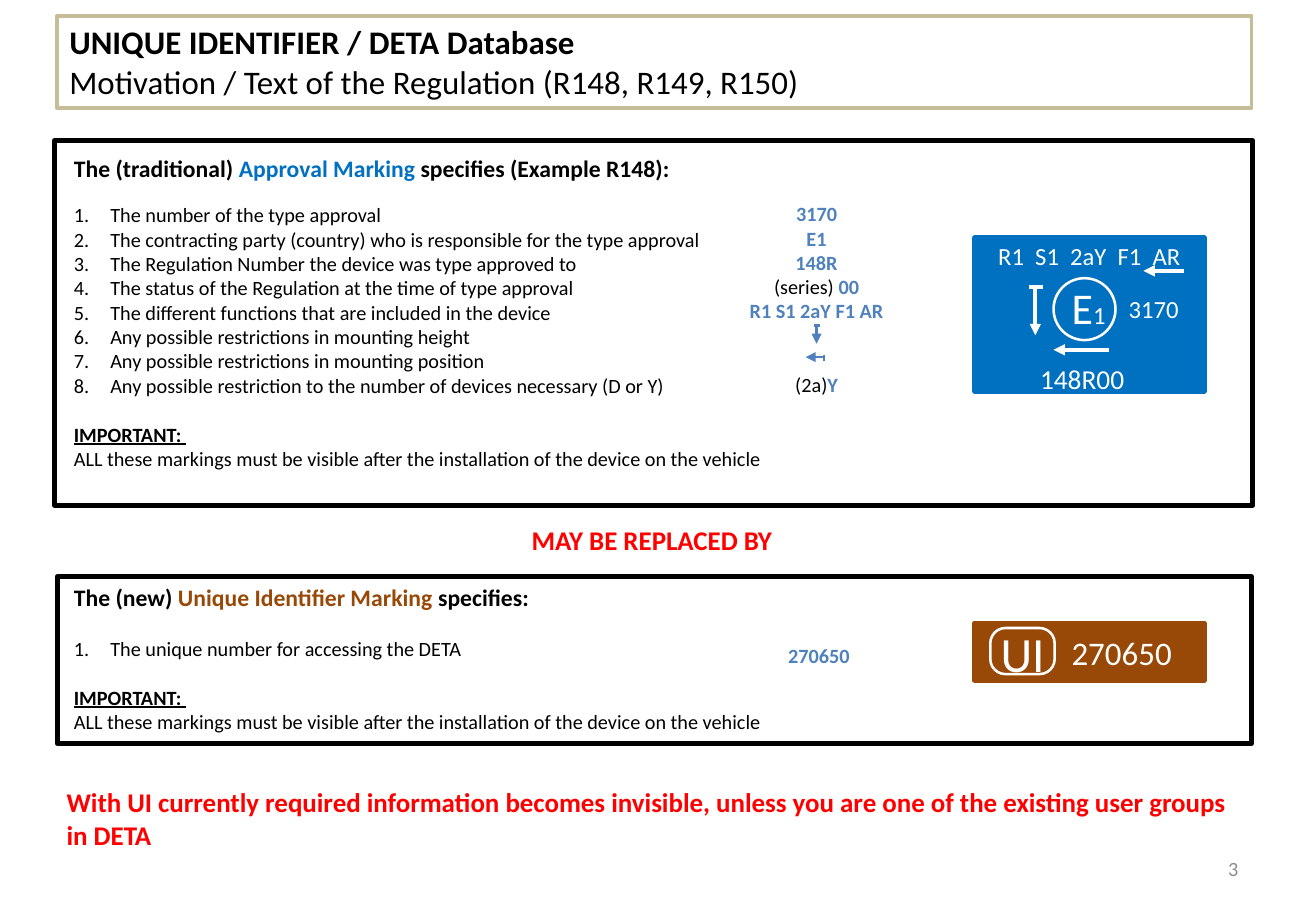
from lxml.etree import SubElement
from pptx import Presentation
from pptx.dml.color import RGBColor
from pptx.enum.shapes import MSO_CONNECTOR, MSO_SHAPE
from pptx.enum.text import MSO_ANCHOR, PP_ALIGN
from pptx.oxml.ns import qn
from pptx.util import Inches, Pt

FONT = "Calibri"
COLORS = {
    "black": "000000", "white": "FFFFFF", "red": "FF0000", "blue": "0070C0",
    "brown": "984807", "steel": "4F81BD", "tan": "C4BD97", "gray": "8C8C8C",
}
ITEMS = [
    "The number of the type approval",
    "The contracting party (country) who is responsible for the type approval",
    "The Regulation Number the device was type approved to",
    "The status of the Regulation at the time of type approval",
    "The different functions that are included in the device",
    "Any possible restrictions in mounting height",
    "Any possible restrictions in mounting position",
    "Any possible restriction to the number of devices necessary (D or Y)",
]
MARKS = ["3170", "E1", "148R", "00", "R1 S1 2aY F1 AR"]
LINE = 14.65  # height in points of one line of 12 point text


def rgb(name):
    return RGBColor.from_string(COLORS[name])


def style(run, size, color, bold=False, under=False):
    font = run.font
    font.name, font.size, font.bold = FONT, Pt(size), bold
    font.underline = under
    font.color.rgb = rgb(color)


def fill_para(para, runs, align=PP_ALIGN.LEFT, before=0):
    """Fill a paragraph with runs given as (text, size, color, bold, underline)."""
    para.alignment = align
    para.space_before = Pt(before)
    for text, *look in runs:
        run = para.add_run()
        run.text = text
        style(run, *look)


def add_para(frame, runs, **options):
    first = frame.paragraphs[0]
    para = frame.add_paragraph() if first.runs else first
    fill_para(para, runs, **options)
    return para


def add_text(shapes, box, *runs, align=PP_ALIGN.LEFT):
    frame = shapes.add_textbox(*map(Inches, box)).text_frame
    frame.word_wrap = True
    if runs:
        add_para(frame, runs, align=align)
    return frame


def add_box(shapes, kind, box, line, width, fill=None):
    shape = shapes.add_shape(kind, *map(Inches, box))
    shape.shadow.inherit = False
    if fill:
        shape.fill.solid()
        shape.fill.fore_color.rgb = rgb(fill)
    else:
        shape.fill.background()
    shape.line.color.rgb = rgb(line)
    shape.line.width = Pt(width)
    return shape


def add_line(shapes, ends, color, width, arrow=False):
    line = shapes.add_connector(MSO_CONNECTOR.STRAIGHT, *map(Inches, ends))
    line.line.color.rgb = rgb(color)
    line.line.width = Pt(width)
    if arrow:
        SubElement(line.line._get_or_add_ln(), qn("a:tailEnd"), type="triangle")
    SubElement(line._element.spPr, qn("a:effectLst"))


def add_rules(shapes, top, head, items, gap):
    """Heading, numbered list and the note on visibility."""
    frame = add_text(shapes, (0.51, top, 7, 1.35), *head)
    for i, item in enumerate(items):
        para = add_para(frame, [(item, 12, "black")], before=0 if i else gap)
        props = para._p.get_or_add_pPr()
        props.set("marL", str(Inches(0.3)))
        props.set("indent", str(-Inches(0.3)))
        SubElement(props, qn("a:buFont"), typeface="+mj-lt")
        SubElement(props, qn("a:buAutoNum"), type="arabicPeriod")
    add_para(frame, [("IMPORTANT: ", 12, "black", True, True)], before=LINE)
    add_para(frame, [("ALL these markings must be visible after the "
                      "installation of the device on the vehicle", 12, "black")])


def add_title(slide):
    title = slide.shapes.title
    title.left, title.top, title.width, title.height = map(
        Inches, (0.47, 0.13, 9.83, 0.76))
    title.line.color.rgb = rgb("tan")
    title.line.width = Pt(2.25)
    frame = title.text_frame
    frame.vertical_anchor = MSO_ANCHOR.TOP
    add_para(frame, [("UNIQUE IDENTIFIER / DETA Database", 19.5, "black", True)])
    add_para(frame, [("Motivation / Text of the Regulation (R148, R149, R150)",
                      19.5, "black")])


def add_marks(shapes):
    """Middle column: the value that answers each list item."""
    center = PP_ALIGN.CENTER
    frame = add_text(shapes, (6.01, 1.61, 1.42, 1.72))
    for mark in MARKS:
        runs = [(mark, 12, "steel", True)]
        if mark == "00":
            runs = [("(series)", 12, "black"), (" 00", 12, "steel", True)]
        add_para(frame, runs, align=center)
    add_para(frame, [("(2a)", 12, "black"), ("Y", 12, "steel", True)],
             align=center, before=2 * LINE)
    add_line(shapes, (6.72, 2.69, 6.72, 2.83), "steel", 1.5, True)
    add_line(shapes, (6.7, 2.68, 6.75, 2.68), "steel", 1.5)
    add_line(shapes, (6.77, 2.94, 6.63, 2.94), "steel", 1.5, True)
    add_line(shapes, (6.78, 2.92, 6.78, 2.97), "steel", 1.5)
    add_text(shapes, (6.03, 5.25, 1.42, 0.3), ("270650", 12, "steel", True),
             align=center)


def add_old_plate(slide):
    shapes = slide.shapes.add_group_shape().shapes
    center = PP_ALIGN.CENTER
    add_box(shapes, MSO_SHAPE.RECTANGLE, (8.02, 1.96, 1.89, 1.26),
            "blue", 3, "blue")
    add_text(shapes, (8.02, 1.93, 1.89, 0.35),
             ("R1  S1  2aY  F1  AR", 14.6, "white"), align=center)
    add_text(shapes, (8.72, 2.26, 0.51, 0.54),
             ("E", 26, "white"), ("1", 14.6, "white"))
    add_box(shapes, MSO_SHAPE.OVAL, (8.67, 2.29, 0.51, 0.51), "white", 1.5)
    number = add_text(shapes, (8.45, 2.86, 0.91, 0.41),
                      ("148R00", 16.2, "white"), align=center)
    number.paragraphs[0].line_spacing = Pt(24.4)
    add_text(shapes, (9.19, 2.37, 0.7, 0.35), ("3170", 14.6, "white"))
    for ends in ((8.52, 2.35, 8.52, 2.76), (9.74, 2.23, 9.41, 2.23),
                 (9.13, 2.88, 8.67, 2.88)):
        add_line(shapes, ends, "white", 2.25, True)
    add_line(shapes, (8.47, 2.36, 8.58, 2.36), "white", 2.25)


def add_new_plate(slide):
    shapes = slide.shapes.add_group_shape().shapes
    add_box(shapes, MSO_SHAPE.RECTANGLE, (8.02, 5.13, 1.89, 0.47),
            "brown", 3, "brown")
    badge = add_box(shapes, MSO_SHAPE.ROUNDED_RECTANGLE,
                    (8.15, 5.17, 0.53, 0.38), "white", 1.5, "brown")
    badge.adjustments[0] = 0.33
    add_text(shapes, (8.09, 5.08, 0.65, 0.59), ("UI", 29.2, "white"),
             align=PP_ALIGN.CENTER)
    add_text(shapes, (8.72, 5.16, 1.18, 0.43), ("270650", 19.5, "white"))


def main():
    deck = Presentation()
    deck.slide_width, deck.slide_height = Inches(10.83), Inches(7.5)
    slide = deck.slides.add_slide(deck.slide_layouts[5])
    shapes = slide.shapes
    add_title(slide)
    for box in ((0.45, 1.16, 9.86, 3), (0.47, 4.75, 9.83, 1.37)):
        add_box(shapes, MSO_SHAPE.RECTANGLE, box, "black", 3)
    add_rules(shapes, 1.22, [("The (traditional) ", 14, "black", True),
                             ("Approval Marking ", 14, "blue", True),
                             ("specifies (Example R148):", 14, "black", True)],
              ITEMS, 12)
    add_rules(shapes, 4.75, [("The (new) ", 14, "black", True),
                             ("Unique Identifier Marking ", 14, "brown", True),
                             ("specifies:", 14, "black", True)],
              ["The unique number for accessing the DETA"], LINE)
    add_marks(shapes)
    add_old_plate(slide)
    add_new_plate(slide)
    add_text(shapes, (0.45, 4.26, 9.83, 0.37),
             ("MAY BE REPLACED BY", 16, "red", True), align=PP_ALIGN.CENTER)
    add_text(shapes, (0.45, 6.42, 9.83, 0.64),
             ("With UI currently required information becomes invisible, unless "
              "you are one of the existing user groups in DETA", 16, "red", True))
    page = add_text(shapes, (7.76, 6.95, 2.53, 0.4), ("3", 12, "gray"),
                    align=PP_ALIGN.RIGHT)
    page.vertical_anchor = MSO_ANCHOR.MIDDLE
    deck.save("out.pptx")


if __name__ == "__main__":
    main()
